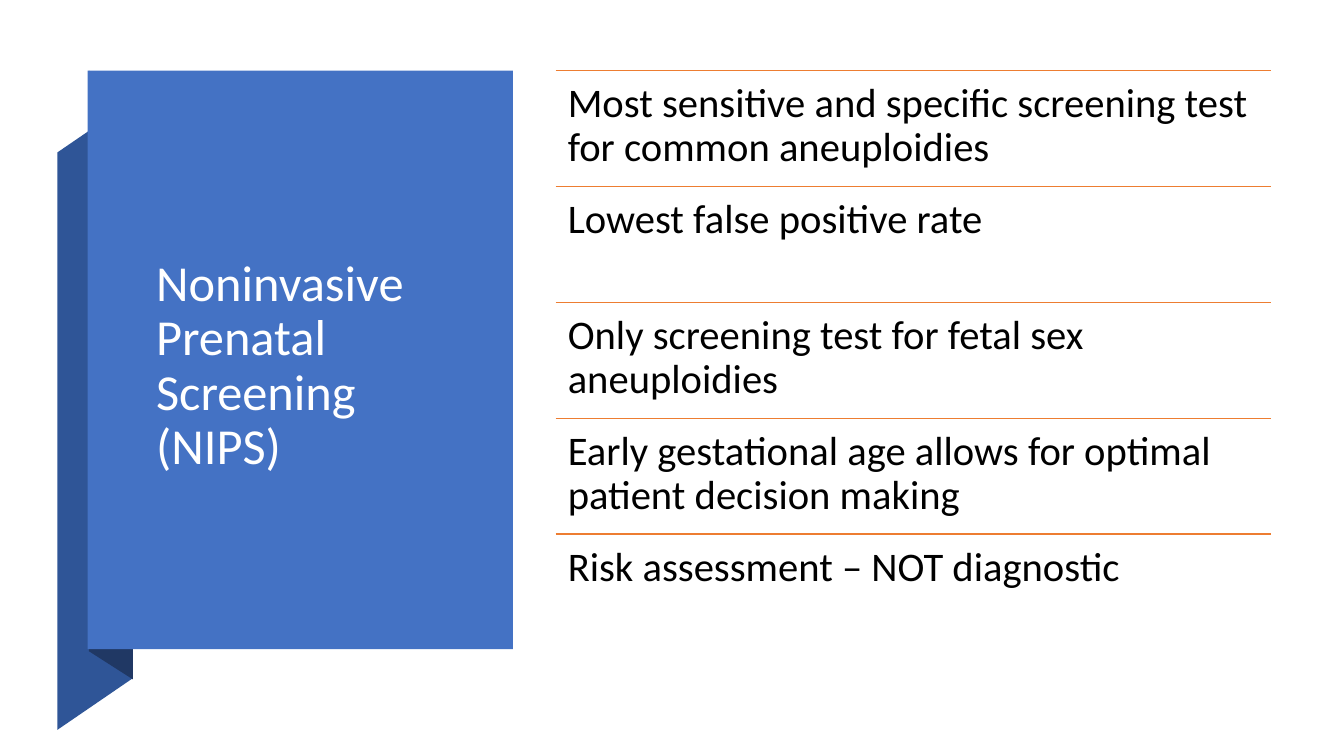
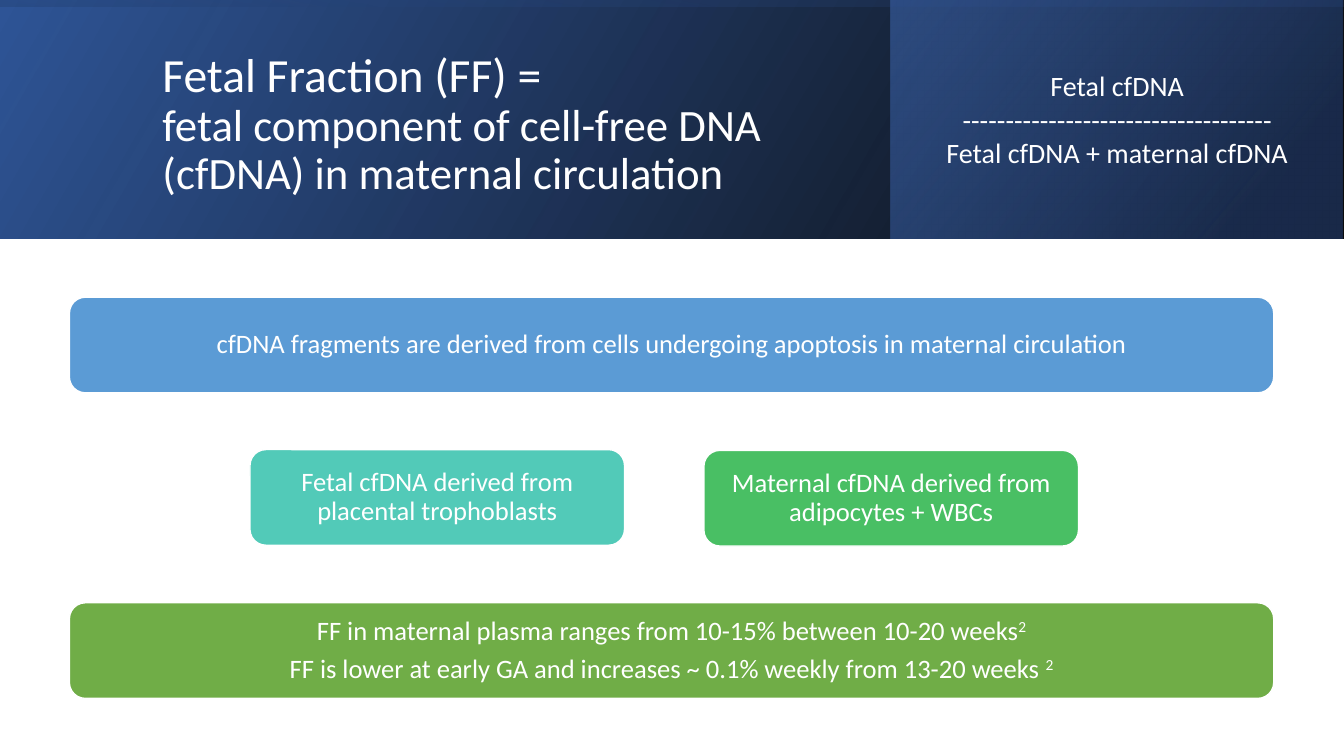
"""Build two slides on noninvasive prenatal screening and fetal fraction."""
from pptx import Presentation
from pptx.dml.color import RGBColor
from pptx.enum.shapes import MSO_CONNECTOR as Connector, MSO_SHAPE as Shape
from pptx.enum.text import MSO_ANCHOR as Anchor, MSO_AUTO_SIZE as AutoSize, PP_ALIGN as Align
from pptx.oxml import parse_xml
from pptx.oxml.ns import nsdecls, qn
from pptx.util import Cm, Pt

hex_color = RGBColor.from_string
FONT = "Calibri"
WHITE, BLACK = "FFFFFF", "000000"
BLUE, DEEP_BLUE, NAVY, ORANGE = "4472C4", "2F5597", "203864", "ED7D31"
WIDTH, HEIGHT = 33.87, 19.05


def paint(shape, color):
    """Give a shape a flat fill without line or shadow."""
    shape.shadow.inherit = False
    shape.fill.solid()
    shape.fill.fore_color.rgb = hex_color(color)
    shape.line.fill.background()


def write(frame, paragraphs, color, align, inset=None, anchor=Anchor.TOP, spacing=0.9, after=0):
    """Fill a text frame with paragraphs of (text, size, superscript) runs."""
    frame.word_wrap = True
    frame.auto_size = AutoSize.NONE
    frame.vertical_anchor = anchor
    if inset is not None:
        frame.margin_left = frame.margin_right = Cm(inset)
        frame.margin_top = frame.margin_bottom = Cm(inset)
    for number, runs in enumerate(paragraphs):
        para = frame.add_paragraph() if number else frame.paragraphs[0]
        para.alignment = align
        para.line_spacing = spacing
        para.space_before = Pt(0)
        para.space_after = Pt(after)
        for text, size, raised in runs:
            span = para.add_run()
            span.text = text.rstrip("\n")
            span.font.name = FONT
            span.font.size = Pt(size)
            span.font.color.rgb = hex_color(color)
            if raised:
                span.font._element.set("baseline", "30000")
            if text.endswith("\n"):
                para.add_line_break()


deck = Presentation()
deck.slide_width, deck.slide_height = Cm(WIDTH), Cm(HEIGHT)
title_only = deck.slide_layouts[5]

page = deck.slides.add_slide(title_only)
ribbon_parts = [
    (DEEP_BLUE, [(1.45, 18.39), (3.35, 17.09), (3.35, 2.54), (1.45, 3.84)]),
    (NAVY, [(2.24, 16.41), (3.35, 17.12), (3.35, 2.51), (2.24, 1.78)]),
]
for color, corners in ribbon_parts:
    points = [(Cm(x), Cm(y)) for x, y in corners]
    outline = page.shapes.build_freeform(*points[0])
    outline.add_line_segments(points[1:], close=True)
    paint(outline.convert_to_shape(), color)
panel = page.shapes.add_shape(Shape.RECTANGLE, Cm(2.21), Cm(1.78), Cm(10.72), Cm(14.58))
paint(panel, BLUE)

points_made = [
    "Most sensitive and specific screening test for common aneuploidies",
    "Lowest false positive rate",
    "Only screening test for fetal sex aneuploidies",
    "Early gestational age allows for optimal patient decision making",
    "Risk assessment – NOT diagnostic",
]
list_left, list_top, list_width, row_height = 14, 1.78, 18.03, 2.92
for row, text in enumerate(points_made):
    top = list_top + row * row_height
    rule = page.shapes.add_connector(
        Connector.STRAIGHT, Cm(list_left), Cm(top), Cm(list_left + list_width), Cm(top))
    rule.line.color.rgb = hex_color(ORANGE)
    rule.line.width = Pt(1)
    rule.element.spPr.append(parse_xml(f"<a:effectLst {nsdecls('a')}/>"))
    box = page.shapes.add_textbox(Cm(list_left), Cm(top), Cm(list_width), Cm(row_height))
    write(box.text_frame, [[(text, 29, False)]], BLACK, Align.LEFT, inset=0.31)

fraction_page = deck.slides.add_slide(title_only)
band_height = 6.02
middle = (WIDTH - band_height) / 2
bands = [
    (0, 0, WIDTH, band_height, 0, 330, [(0, BLACK, 96), (100, DEEP_BLUE, 100)]),
    (22.45, 0, 11.38, band_height, 0, 320, [(19, NAVY, 68), (100, BLUE, 48)]),
    (middle, -middle, band_height, WIDTH, 270, 350, [(23, DEEP_BLUE, 16), (99, BLACK, 45)]),
]
for left, top, width, height, turn, angle, stops in bands:
    band = fraction_page.shapes.add_shape(
        Shape.RECTANGLE, Cm(left), Cm(top), Cm(width), Cm(height))
    paint(band, NAVY)
    band.rotation = turn
    properties = band.element.spPr
    properties.find(qn("a:xfrm")).set("flipH", "1")
    stop_list = "".join(
        f'<a:gs pos="{place * 1000}"><a:srgbClr val="{color}">'
        f'<a:alpha val="{opacity * 1000}"/></a:srgbClr></a:gs>'
        for place, color, opacity in stops)
    gradient = parse_xml(
        f"<a:gradFill {nsdecls('a')}><a:gsLst>{stop_list}</a:gsLst>"
        f'<a:lin ang="{angle * 60000}" scaled="0"/></a:gradFill>')
    properties.replace(properties.find(qn("a:solidFill")), gradient)

wide_left, wide_width = 1.75, 30.35
cards = [
    (wide_left, 7.49, wide_width, "5B9BD5", [
        [("cfDNA fragments are derived from cells undergoing apoptosis in maternal circulation",
          19, False)]]),
    (6.3, 11.33, 9.44, "52CAB8", [
        [("Fetal cfDNA derived from placental trophoblasts", 19, False)]]),
    (17.74, 11.35, 9.44, "49BF64", [
        [("Maternal cfDNA derived from adipocytes + WBCs", 19, False)]]),
    (wide_left, 15.19, wide_width, "70AD47", [
        [("FF in maternal plasma ranges from 10-15% between 10-20 weeks", 19, False),
         ("2", 19, True)],
        [("FF is lower at early GA and increases ~ 0.1% weekly from 13-20 weeks ", 19, False),
         ("2", 19, True)]]),
]
for left, top, width, color, paragraphs in cards:
    card = fraction_page.shapes.add_shape(
        Shape.ROUNDED_RECTANGLE, Cm(left), Cm(top), Cm(width), Cm(2.41))
    paint(card, color)
    card.line.color.rgb = hex_color(WHITE)
    card.line.width = Pt(1)
    write(card.text_frame, paragraphs, WHITE, Align.CENTER, inset=0.2,
          anchor=Anchor.MIDDLE, after=6.6)

formula = fraction_page.shapes.add_textbox(Cm(23.39), Cm(1.6), Cm(9.53), Cm(2.82))
formula_lines = ["Fetal cfDNA", "-" * 36, "Fetal cfDNA + maternal cfDNA"]
write(formula.text_frame, [[(line, 20, False)] for line in formula_lines],
      WHITE, Align.CENTER, spacing=1)

titles = [
    (page, (3.68, 4.24, 7.65, 10.01), [("Noninvasive Prenatal Screening (NIPS)", 36, False)]),
    (fraction_page, (3.84, 0.97, 18.62, 4.37), [
        ("Fetal Fraction (FF) =\n", 34, False),
        ("fetal component of cell-free DNA (cfDNA) in maternal circulation", 32, False)]),
]
for slide, frame_box, runs in titles:
    title = slide.shapes.title
    title.left, title.top, title.width, title.height = map(Cm, frame_box)
    write(title.text_frame, [runs], WHITE, Align.LEFT, anchor=Anchor.MIDDLE)
    title.element.getparent().append(title.element)

deck.save("out.pptx")
